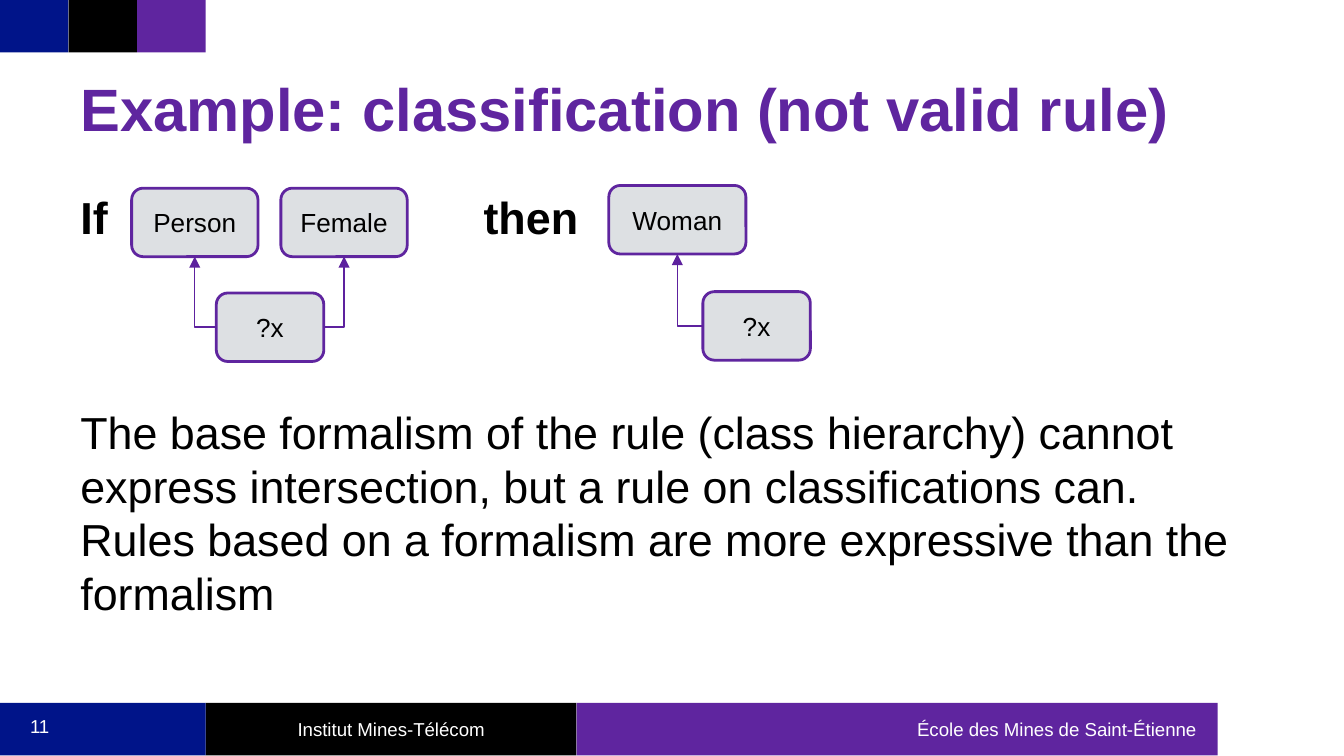
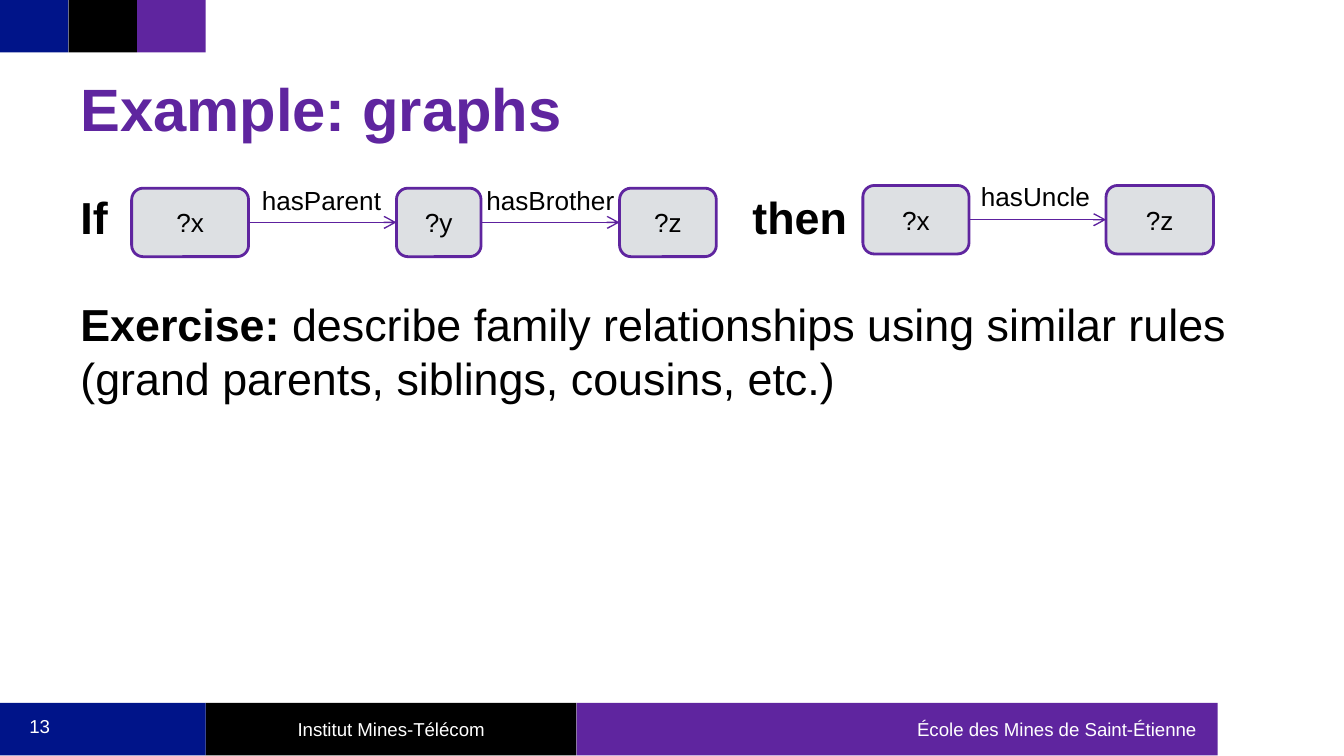
from pptx import Presentation
from pptx.dml.color import RGBColor
from pptx.enum import shapes, text
from pptx.oxml import ns
from pptx.util import Inches, Pt
from lxml import etree

BLUE = RGBColor(0x00, 0x14, 0x89)
BLACK = RGBColor(0, 0, 0)
PURPLE = RGBColor(0x5F, 0x25, 0x9F)
EDGE = RGBColor(0x5D, 0x21, 0x9E)
GREY = RGBColor(0xDD, 0xE0, 0xE3)
WHITE = RGBColor(0xFF, 0xFF, 0xFF)

LEFT, MID, RIGHT = text.PP_ALIGN.LEFT, text.PP_ALIGN.CENTER, text.PP_ALIGN.RIGHT
TOP, CENTER, BOTTOM = text.MSO_ANCHOR.TOP, text.MSO_ANCHOR.MIDDLE, text.MSO_ANCHOR.BOTTOM
RECT, ROUND = shapes.MSO_SHAPE.RECTANGLE, shapes.MSO_SHAPE.ROUNDED_RECTANGLE
LINE, ELBOW = shapes.MSO_CONNECTOR.STRAIGHT, shapes.MSO_CONNECTOR.ELBOW
SITE_TOP, SITE_LEFT, SITE_BASE, SITE_RIGHT = range(4)
PAD = (0.1, 0.1, 0.1, 0.1)
SLIM = (0.1, 0.05, 0.1, 0.05)
PITCH = 28.8


def frame(shape, pad, anchor, wrap=True):
    box = shape.text_frame
    box.word_wrap = wrap
    box.vertical_anchor = anchor
    box.margin_left, box.margin_top, box.margin_right, box.margin_bottom = map(Inches, pad)
    return box


def write(par, words, size=14, color=BLACK, bold=False, align=LEFT):
    par.alignment = align
    run = par.add_run()
    run.text = words
    font = run.font
    font.name, font.size, font.bold = "Arial", Pt(size), bold
    font.color.rgb = color


def label(slide, words, at, pad=PAD, anchor=CENTER, wrap=True, **style):
    shape = slide.shapes.add_textbox(*map(Inches, at))
    write(frame(shape, pad, anchor, wrap).paragraphs[0], words, **style)


def block(slide, at, fill, kind=RECT):
    shape = slide.shapes.add_shape(kind, *map(Inches, at))
    shape.shadow.inherit = False
    shape.fill.solid()
    shape.fill.fore_color.rgb = fill
    shape.line.fill.background()
    return shape


def band(slide, at, fill, words, align, pad=SLIM):
    shape = block(slide, at, fill)
    write(frame(shape, pad, CENTER).paragraphs[0], words, size=10, color=WHITE, align=align)


def node(slide, words, left, top, width):
    shape = block(slide, (left, top, width, 0.51), GREY, ROUND)
    shape.adjustments[0] = 0.167
    shape.line.color.rgb = PURPLE
    shape.line.width = Pt(1.5)
    write(frame(shape, PAD, CENTER).paragraphs[0], words, align=MID)
    return shape


def link(slide, start, exit, end, entry, kind=LINE, head="arrow"):
    line = slide.shapes.add_connector(kind, 0, 0, 0, 0)
    line.begin_connect(start, exit)
    line.end_connect(end, entry)
    line.line.color.rgb = EDGE
    line.line.width = Pt(0.75)
    props = line._element.spPr
    if kind == ELBOW:
        props.find(ns.qn("a:prstGeom")).set("prst", "bentConnector2")
    etree.SubElement(line.line._get_or_add_ln(), ns.qn("a:tailEnd"), type=head)
    etree.SubElement(props, ns.qn("a:effectLst"))


def climb(slide, start, exit, end):
    link(slide, start, exit, end, SITE_BASE, ELBOW, "triangle")


def relate(slide, start, end, words, at):
    link(slide, start, SITE_RIGHT, end, SITE_LEFT)
    label(slide, words, at, SLIM, TOP, wrap=False)


def body(slide, stop, gap, items):
    shape = slide.shapes.add_textbox(*map(Inches, (0.5, 1.31, 9, 4.07)))
    box = frame(shape, PAD, TOP)
    rule = box.paragraphs[0]
    tabs = etree.SubElement(rule._p.get_or_add_pPr(), ns.qn("a:tabLst"))
    etree.SubElement(tabs, ns.qn("a:tab"), pos=str(Inches(stop)), algn="l")
    write(rule, "If\tthen", size=24, bold=True)
    for row, runs in enumerate(items):
        par = box.add_paragraph()
        if row == 0:
            par.space_before = Pt(gap * PITCH)
        for words, bold in runs:
            write(par, words, size=24, bold=bold)
    for par in box.paragraphs:
        par.line_spacing = Pt(PITCH)


def page(deck, number, title):
    slide = deck.slides.add_slide(deck.slide_layouts[6])
    for step, fill in enumerate((BLUE, BLACK, PURPLE)):
        block(slide, (step * 0.51, 0, 0.51, 0.39), fill)
    band(slide, (1.53, 5.23, 2.76, 0.39), BLACK, "Institut Mines-Télécom", MID)
    block(slide, (0, 5.23, 1.53, 0.39), BLUE)
    band(slide, (4.29, 5.23, 4.77, 0.39), PURPLE, "École des Mines de Saint-Étienne",
         RIGHT, (0.1, 0.05, 0.16, 0.05))
    label(slide, str(number), (0, 5.19, 0.59, 0.43), size=10, color=WHITE, align=MID)
    label(slide, title, (0.5, 0.23, 9, 0.94), anchor=BOTTOM, size=32, color=PURPLE, bold=True)
    return slide


def classes(deck):
    slide = page(deck, 11, "Example: classification (not valid rule)")
    body(slide, 3, 3, [
        [("The base formalism of the rule (class hierarchy) cannot express intersection, "
          "but a rule on classifications can.", False)],
        [("Rules based on a formalism are more expressive than the formalism", False)],
    ])
    person = node(slide, "Person", 0.98, 1.4, 0.94)
    given = node(slide, "?x", 1.61, 2.18, 0.8)
    female = node(slide, "Female", 2.09, 1.4, 0.94)
    woman = node(slide, "Woman", 4.53, 1.38, 1.02)
    result = node(slide, "?x", 5.23, 2.17, 0.8)
    climb(slide, given, SITE_LEFT, person)
    climb(slide, given, SITE_RIGHT, female)
    climb(slide, result, SITE_LEFT, woman)


def graphs(deck):
    slide = page(deck, 13, "Example: graphs")
    body(slide, 5, 1, [
        [("Exercise: ", True),
         ("describe family relationships using similar rules "
          "(grand parents, siblings, cousins, etc.)", False)],
    ])
    child = node(slide, "?x", 0.98, 1.4, 0.87)
    uncle = node(slide, "?z", 4.61, 1.4, 0.72)
    parent = node(slide, "?y", 2.95, 1.4, 0.63)
    niece = node(slide, "?x", 6.42, 1.38, 0.79)
    found = node(slide, "?z", 8.23, 1.38, 0.8)
    relate(slide, niece, found, "hasUncle", (7.2, 1.29, 1.02, 0.34))
    relate(slide, child, parent, "hasParent", (1.85, 1.32, 1.1, 0.34))
    relate(slide, parent, uncle, "hasBrother", (3.52, 1.32, 1.17, 0.34))


def main():
    deck = Presentation()
    deck.slide_width = Inches(10)
    deck.slide_height = deck.slide_width * 9 // 16
    classes(deck)
    graphs(deck)
    deck.save("out.pptx")


if __name__ == "__main__":
    main()
